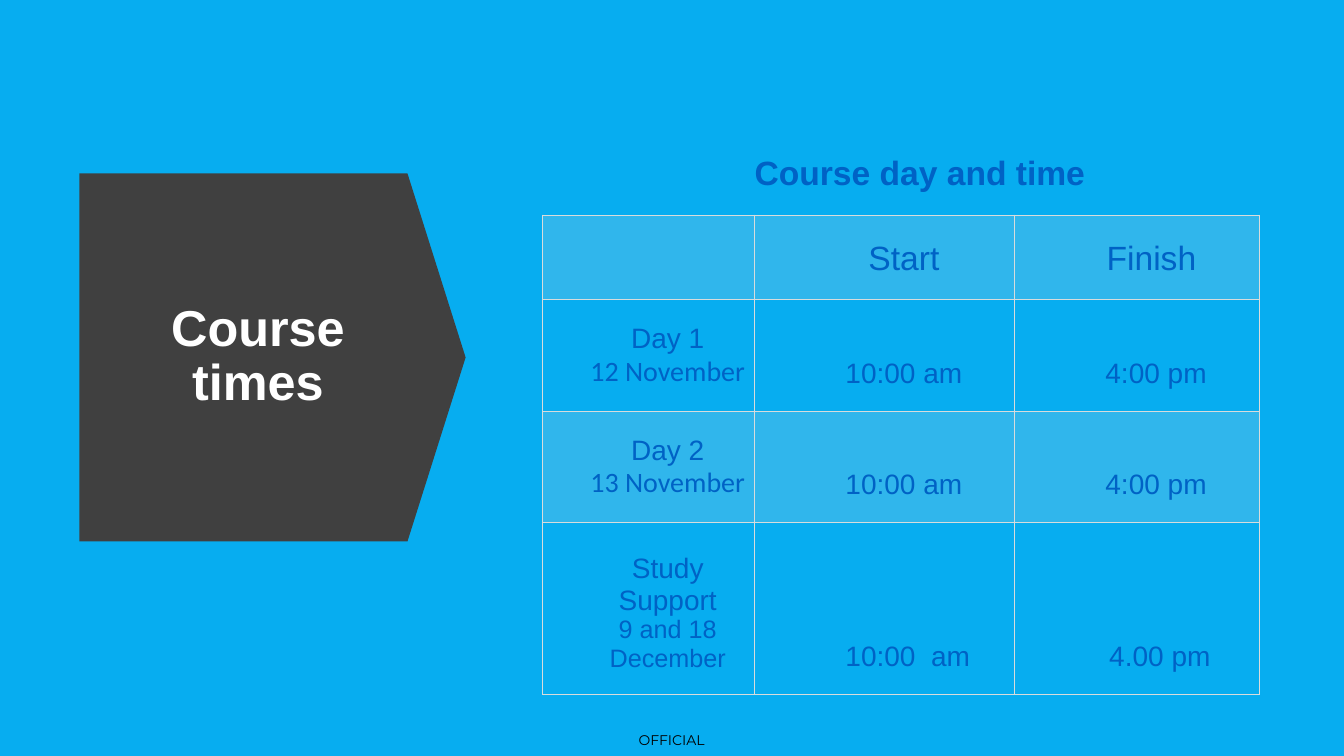
from lxml import etree
from pptx import Presentation
from pptx.dml.color import RGBColor
from pptx.enum import shapes, text
from pptx.oxml.ns import qn
from pptx.util import Pt

BLUE, GRID, TINT = "0062C5", "D8DCDC", "D8DEDC"


def rgb(value):
    return RGBColor.from_string(value)


def write(tf, lines, inset=(0, 0, 0, 0), spacing=None):
    """Fill a text frame with (text, font format) lines, centred."""
    tf.word_wrap = True
    for side, value in zip(("left", "top", "right", "bottom"), inset):
        setattr(tf, "margin_" + side, Pt(value))
    for i, (words, size, name, color, bold) in enumerate(lines):
        p = tf.paragraphs[0] if i == 0 else tf.add_paragraph()
        p.alignment = text.PP_ALIGN.CENTER
        if spacing:
            p.line_spacing = spacing
        r = p.add_run()
        r.text = words
        r.font.color.rgb = rgb(color)
        for key, value in dict(size=Pt(size), name=name, bold=bold).items():
            setattr(r.font, key, value)


prs = Presentation()
prs.slide_width, prs.slide_height = Pt(960), Pt(540)
s = prs.slides.add_slide(prs.slide_layouts[6])
s.background.fill.solid()
s.background.fill.fore_color.rgb = rgb("07ADF0")

# Classification label
sp = s.shapes.add_textbox(Pt(443), Pt(517.5), Pt(73.5), Pt(22.5))
sp.text_frame.vertical_anchor = text.MSO_ANCHOR.MIDDLE
write(sp.text_frame, [("OFFICIAL", 10, "Montserrat", "000000", False)])

# Arrow panel, pointing right
sp = s.shapes.add_shape(shapes.MSO_SHAPE.DOWN_ARROW, Pt(63.3), Pt(117.4), Pt(262.8), Pt(275.8))
sp.rotation = 270
sp.adjustments[0], sp.adjustments[1] = 1, 0.158
sp.shadow.inherit = False
sp.fill.solid()
sp.fill.fore_color.rgb = rgb("404040")
sp.line.fill.background()

# Title
sp = s.shapes.add_textbox(Pt(80.6), Pt(154.8), Pt(207.4), Pt(200.9))
sp.text_frame.vertical_anchor = text.MSO_ANCHOR.MIDDLE
write(sp.text_frame, [("Course times", 36, "Arial", "FFFFFF", True)], (7.2, 3.6, 7.2, 3.6), 0.9)

# Timetable: each cell is a list of (text, size, font) lines
rows = [
    [[("Course day and time", 24, "Arial")], [], []],
    [[], [("Start", 24, "Arial")], [("Finish ", 24, "Arial")]],
    [[("Day 1", 20, "Arial"), ("12 November", 20, "Calibri")],
     [("10:00 am", 20, "Arial")], [("4:00 pm", 20, "Arial")]],
    [[("Day 2", 20, "Arial"), ("13 November", 20, "Calibri")],
     [("10:00 am", 20, "Arial")], [("4:00 pm", 20, "Arial")]],
    [[("Study Support", 20, "Arial"), ("9 and 18 December", 18, "Arial")],
     [(" 10:00  am", 20, "Arial")], [(" 4.00 pm", 20, "Arial")]],
]
frame = s.shapes.add_table(5, 3, Pt(387.4), Pt(75.6), Pt(511.9), Pt(420.5))
table = frame.table
table.first_row = table.horz_banding = False
for col, width in zip(table.columns, (151.7, 185.8, 174.4)):
    col.width = Pt(width)
for row, height in zip(table.rows, (78, 52, 40, 56, 78)):
    row.height = Pt(height)
frame.height = Pt(420.5)
table.cell(0, 0).merge(table.cell(0, 2))

for i, row in enumerate(rows):
    for j, lines in enumerate(row):
        cell = table.cell(i, j)
        cell.vertical_anchor = text.MSO_ANCHOR.BOTTOM
        inset = (31.7, 15.8, 4.3, 15.8)
        for side, value in zip(("left", "top", "right", "bottom"), inset):
            setattr(cell, "margin_" + side, Pt(value))
        write(cell.text_frame, [(*line, BLUE, i == 0) for line in lines], inset)

        # Grid lines, leaving the heading row open
        tc_pr = cell._tc.get_or_add_tcPr()
        for edge in "LRTB":
            ln = etree.SubElement(tc_pr, qn("a:ln" + edge), w=str(Pt(0.75)))
            if i == 0 and edge != "B":
                etree.SubElement(ln, qn("a:noFill"))
            else:
                fill = etree.SubElement(ln, qn("a:solidFill"))
                etree.SubElement(fill, qn("a:srgbClr"), val=GRID)

        # Translucent bands on every second row
        if i % 2:
            cell.fill.solid()
            cell.fill.fore_color.rgb = rgb(TINT)
            color = tc_pr.find(qn("a:solidFill")).find(qn("a:srgbClr"))
            etree.SubElement(color, qn("a:alpha"), val="20000")
        else:
            cell.fill.background()

prs.save("out.pptx")
